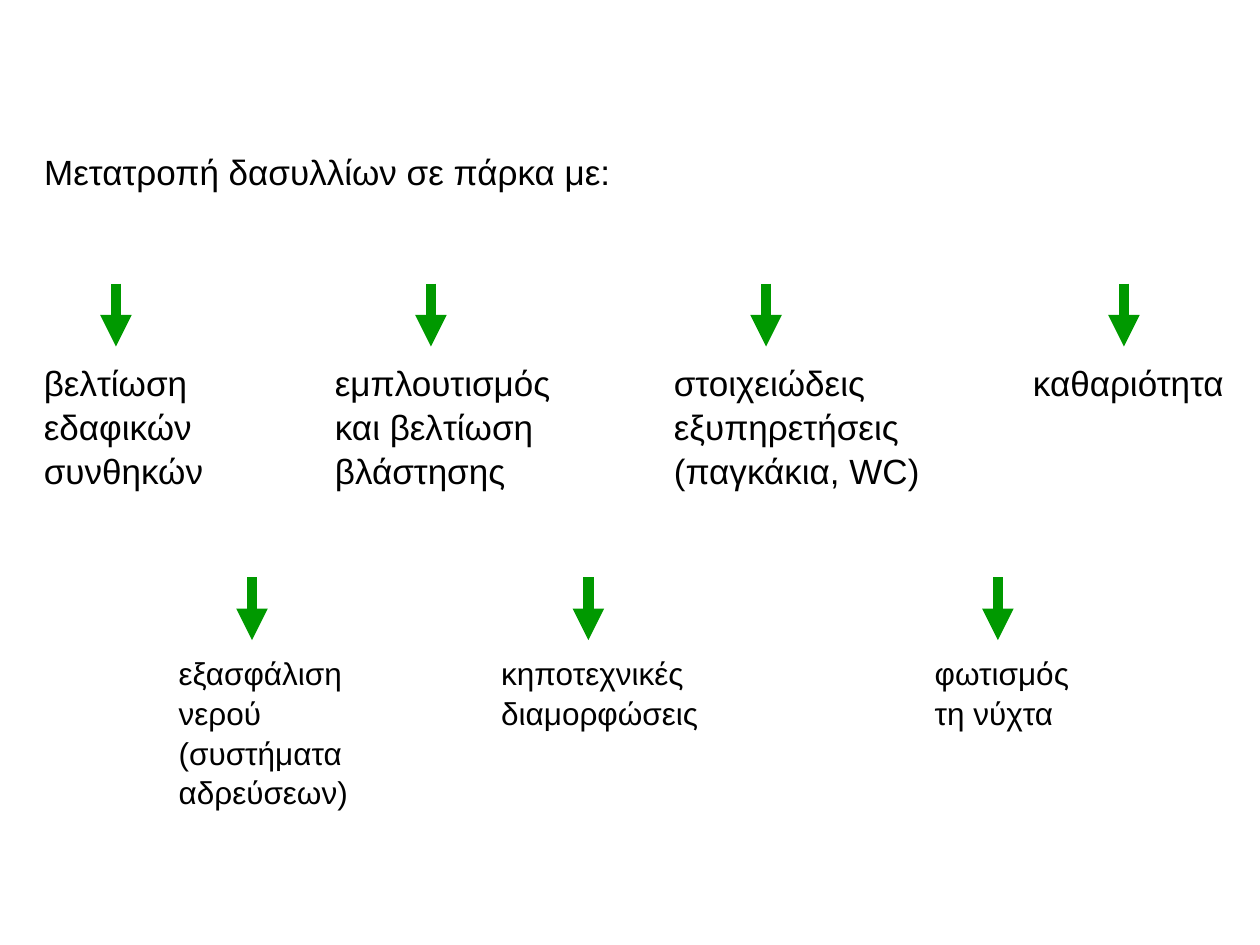
from lxml.etree import SubElement
from pptx import Presentation
from pptx.dml.color import RGBColor
from pptx.enum.shapes import MSO_CONNECTOR
from pptx.enum.text import MSO_ANCHOR, PP_ALIGN
from pptx.oxml.ns import qn
from pptx.util import Inches, Pt

BLACK = RGBColor(0x00, 0x00, 0x00)
GREEN = RGBColor(0x00, 0x99, 0x00)
FONT = "Arial"
ARROW_LENGTH = 0.5

HEADING = "Μετατροπή δασυλλίων σε πάρκα με:"

# Each measure: arrow x, text box left, text box width, wording
UPPER_MEASURES = [
    (0.92, 0.25, 1.9, "βελτίωση\nεδαφικών\nσυνθηκών"),
    (3.42, 2.56, 2.4, "εμπλουτισμός\nκαι βελτίωση\nβλάστησης"),
    (6.08, 5.25, 2.5, "στοιχειώδεις\nεξυπηρετήσεις\n(παγκάκια, WC)"),
    (8.92, 8.1, 1.9, "καθαριότητα"),
]
LOWER_MEASURES = [
    (2.0, 1.32, 2.0, "εξασφάλιση\nνερού\n(συστήματα\nαδρεύσεων)"),
    (4.67, 3.88, 2.2, "κηποτεχνικές\nδιαμορφώσεις"),
    (7.92, 7.32, 1.8, "φωτισμός\nτη νύχτα"),
]


def fill_text(sp, text, size):
    tf = sp.text_frame
    tf.text = text
    tf.word_wrap = True
    tf.vertical_anchor = MSO_ANCHOR.TOP
    for p in tf.paragraphs:
        p.alignment = PP_ALIGN.LEFT
        p.line_spacing = 1.05
        p.space_before = Pt(0)
        for r in p.runs:
            r.font.name = FONT
            r.font.size = Pt(size)
            r.font.color.rgb = BLACK


def set_heading(slide):
    title = slide.shapes.title
    title.left, title.top = Inches(0.25), Inches(1.13)
    title.width, title.height = Inches(9.5), Inches(0.45)
    fill_text(title, HEADING, 20)


def add_arrow(slide, x, top):
    line = slide.shapes.add_connector(
        MSO_CONNECTOR.STRAIGHT,
        Inches(x), Inches(top), Inches(x), Inches(top + ARROW_LENGTH))
    line.line.color.rgb = GREEN
    line.line.width = Pt(6)
    SubElement(line.line._get_or_add_ln(), qn("a:tailEnd"), type="triangle")
    SubElement(line._element.spPr, qn("a:effectLst"))


def add_measures(slide, measures, arrow_top, text_top, size):
    """Add a row of measures, each a text under a down arrow."""
    for arrow_x, left, width, text in measures:
        add_arrow(slide, arrow_x, arrow_top)
        height = 0.1 + (text.count("\n") + 1) * size / 60
        box = slide.shapes.add_textbox(
            Inches(left), Inches(text_top), Inches(width), Inches(height))
        fill_text(box, text, size)


def main():
    prs = Presentation()
    prs.slide_width, prs.slide_height = Inches(10), Inches(7.5)
    slide = prs.slides.add_slide(prs.slide_layouts[5])
    set_heading(slide)
    add_measures(slide, UPPER_MEASURES, 2.25, 2.8, 20)
    add_measures(slide, LOWER_MEASURES, 4.58, 5.13, 18)
    prs.save("out.pptx")


if __name__ == "__main__":
    main()
